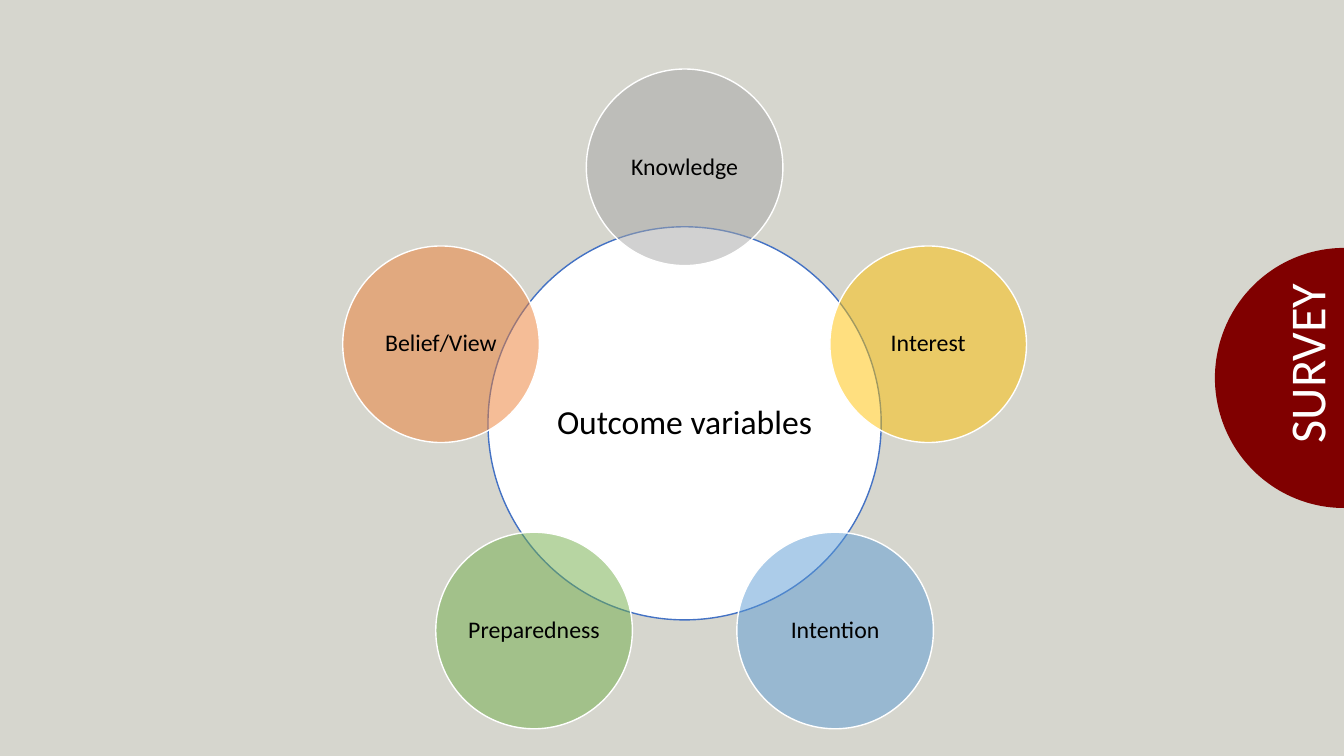
from dataclasses import dataclass
from math import cos, pi, radians, sin

from lxml import etree
from pptx import Presentation
from pptx.dml.color import RGBColor
from pptx.enum.shapes import MSO_SHAPE
from pptx.enum.text import MSO_ANCHOR, PP_ALIGN
from pptx.oxml.ns import qn
from pptx.util import Inches, Pt

OVAL = MSO_SHAPE.OVAL
TOP, MIDDLE = MSO_ANCHOR.TOP, MSO_ANCHOR.MIDDLE
CENTER = PP_ALIGN.CENTER
BLANK_LAYOUT = 6


@dataclass(frozen=True)
class Theme:
    font: str = "Calibri"
    background: str = "D6D6CE"
    tab: str = "800000"
    hub_line: str = "4472C4"
    white: str = "FFFFFF"
    black: str = "000000"
    hub_size: int = 24
    outcome_size: int = 17
    tab_size: int = 36


class SlideBuilder:
    def __init__(self, slide, theme):
        self.slide = slide
        self.theme = theme

    def background(self):
        self.fill(self.slide.background, self.theme.background)

    def fill(self, target, color, opacity=100):
        target.fill.solid()
        target.fill.fore_color.rgb = RGBColor.from_string(color)
        if opacity < 100:
            color_element = target.element.spPr.find(qn("a:solidFill"))[0]
            alpha = etree.SubElement(color_element, qn("a:alpha"))
            alpha.set("val", str(opacity * 1000))

    def label(self, shape, text, size, color, inset, anchor=MIDDLE):
        frame = shape.text_frame
        frame_format = {"word_wrap": True, "vertical_anchor": anchor}
        for side in ("left", "top", "right", "bottom"):
            frame_format[f"margin_{side}"] = Inches(inset)
        paragraph = frame.paragraphs[0]
        run = paragraph.add_run()
        formats = (
            (frame, frame_format),
            (paragraph, {"alignment": CENTER, "line_spacing": 0.9}),
            (run, {"text": text}),
            (run.font, {"name": self.theme.font, "size": Pt(size)}),
            (run.font.color, {"rgb": RGBColor.from_string(color)}),
        )
        for target, values in formats:
            for name, value in values.items():
                setattr(target, name, value)

    def circle(self, center_x, center_y, diameter, text, size, inset,
               color, line_color, opacity=100):
        shape = self.slide.shapes.add_shape(
            OVAL, Inches(center_x - diameter / 2), Inches(center_y - diameter / 2),
            Inches(diameter), Inches(diameter))
        shape.shadow.inherit = False
        self.fill(shape, color, opacity)
        shape.line.color.rgb = RGBColor.from_string(line_color)
        shape.line.width = Pt(1)
        self.label(shape, text, size, self.theme.black, inset)

    def half_disc(self, right, center_y, width, height, color, steps=90):
        points = []
        for step in range(steps + 1):
            angle = pi * step / steps
            points.append((Inches(right - width * sin(angle)),
                           Inches(center_y - height / 2 * cos(angle))))
        builder = self.slide.shapes.build_freeform(*points[0])
        builder.add_line_segments(points[1:], close=True)
        shape = builder.convert_to_shape()
        shape.shadow.inherit = False
        self.fill(shape, color)
        shape.line.fill.background()

    def rotated_label(self, left, top, width, height, text, size, color):
        box = self.slide.shapes.add_textbox(
            Inches(left), Inches(top), Inches(width), Inches(height))
        box.rotation = 270
        self.label(box, text, size, color, 0.05, TOP)


def main():
    presentation = Presentation()
    presentation.slide_width = Inches(13.33)
    presentation.slide_height = Inches(7.5)
    slide = presentation.slides.add_slide(presentation.slide_layouts[BLANK_LAYOUT])
    theme = Theme()
    builder = SlideBuilder(slide, theme)

    # Background and side tab
    builder.background()
    builder.half_disc(13.33, 3.75, 1.28, 2.58, theme.tab)

    # Central hub
    hub_x, hub_y, orbit = 6.79, 4.2, 2.54
    builder.circle(hub_x, hub_y, 3.9, "Outcome variables", theme.hub_size, 0.03,
                   theme.white, theme.hub_line)

    # Outcomes, clockwise from the top at equal angles
    outcomes = (
        ("Knowledge", "A5A5A5"),
        ("Interest", "FFC000"),
        ("Intention", "5B9BD5"),
        ("Preparedness", "70AD47"),
        ("Belief/View", "ED7D31"),
    )
    for index, (name, color) in enumerate(outcomes):
        angle = radians(index * 360 / len(outcomes))
        builder.circle(hub_x + orbit * sin(angle), hub_y - orbit * cos(angle), 1.95,
                       name, theme.outcome_size, 0.02, color, theme.white, opacity=50)

    # Tab label
    builder.rotated_label(11.96, 3.29, 2.04, 0.63, "SURVEY", theme.tab_size, theme.white)

    presentation.save("out.pptx")


if __name__ == "__main__":
    main()
